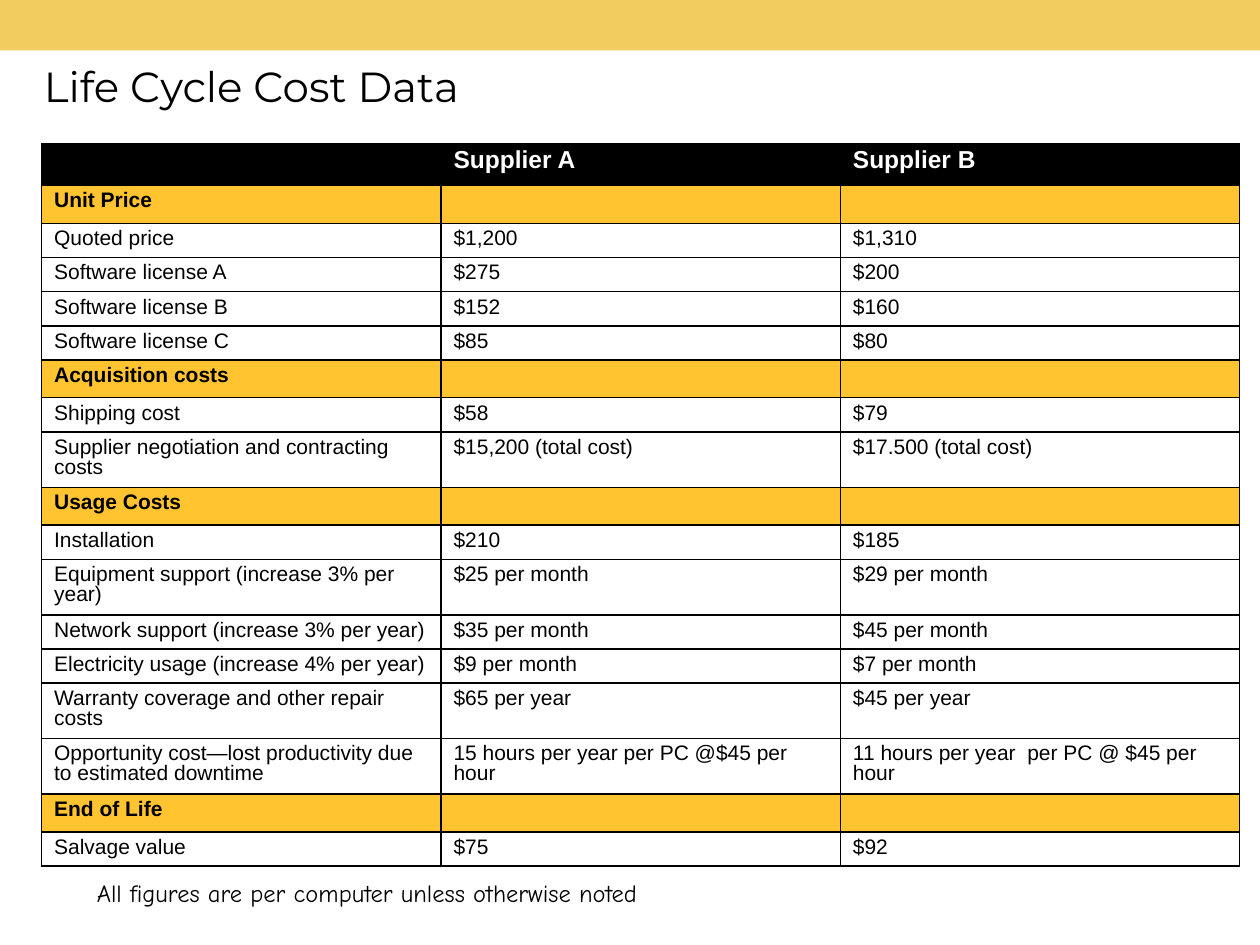
"""Build the life cycle cost comparison slide."""
from lxml.etree import SubElement
from pptx import Presentation
from pptx.dml.color import RGBColor
from pptx.enum.shapes import MSO_SHAPE
from pptx.enum.text import MSO_ANCHOR
from pptx.oxml.ns import qn
from pptx.util import Inches, Pt

BLACK = RGBColor(0x00, 0x00, 0x00)
WHITE = RGBColor(0xFF, 0xFF, 0xFF)
BANNER_GOLD = RGBColor(0xF3, 0xCC, 0x5F)
SECTION_GOLD = RGBColor(0xFF, 0xC4, 0x2F)
WIDTH, HEIGHT = Inches(10), Inches(7.5)
COLUMN_WIDTH = Inches(3.17)
HEADING_ROW, SINGLE_ROW, DOUBLE_ROW = Inches(0.3), Inches(0.27), Inches(0.44)
DOUBLE_LINED = ("Supplier negotiation", "Equipment", "Warranty", "Opportunity")

HEADER = ("", "Supplier A", "Supplier B")
SECTIONS = {
    "Unit Price": [
        ("Quoted price", "$1,200", "$1,310"),
        ("Software license A", "$275", "$200"),
        ("Software license B", "$152", "$160"),
        ("Software license C", "$85", "$80"),
    ],
    "Acquisition costs": [
        ("Shipping cost", "$58", "$79"),
        ("Supplier negotiation and contracting costs",
         "$15,200 (total cost)", "$17.500 (total cost)"),
    ],
    "Usage Costs": [
        ("Installation", "$210", "$185"),
        ("Equipment support (increase 3% per year)", "$25 per month", "$29 per month"),
        ("Network support (increase 3% per year)", "$35 per month", "$45 per month"),
        ("Electricity usage (increase 4% per year)", "$9 per month", "$7 per month"),
        ("Warranty coverage and other repair costs", "$65 per year", "$45 per year"),
        ("Opportunity cost—lost productivity due to estimated downtime",
         "15 hours per year per PC @$45 per hour",
         "11 hours per year  per PC @ $45 per hour"),
    ],
    "End of Life": [("Salvage value", "$75", "$92")],
}


def write(para, text, size=12, font="Arial", color=BLACK, bold=False):
    if not text:
        SubElement(para._p, qn("a:endParaRPr"), sz=str(size * 100))
        return
    span = para.add_run()
    span.text = text
    span.font.size, span.font.name, span.font.bold = Pt(size), font, bold
    span.font.color.rgb = color


def draw_borders(cell):
    properties = cell._tc.get_or_add_tcPr()
    for side in ("lnL", "lnR", "lnT", "lnB"):
        line = SubElement(properties, qn(f"a:{side}"), w=str(Pt(1)))
        fill = SubElement(line, qn("a:solidFill"))
        SubElement(fill, qn("a:srgbClr"), val=str(BLACK))


deck = Presentation()
deck.slide_width, deck.slide_height = WIDTH, HEIGHT
page = deck.slides.add_slide(deck.slide_layouts[6])

banner = page.shapes.add_shape(MSO_SHAPE.RECTANGLE, 0, 0, WIDTH, Inches(0.4))
banner.shadow.inherit = False
banner.fill.solid()
banner.fill.fore_color.rgb = BANNER_GOLD
banner.line.fill.background()

captions = [
    ("Life Cycle Cost Data", "Montserrat", 24, (0.25, 0.43, 3.92, 0.5)),
    ("All figures are per computer unless otherwise noted", "Comic Neue", 14,
     (0.67, 6.92, 4.92, 0.33)),
]
for text, font, size, place in captions:
    box = page.shapes.add_textbox(*map(Inches, place))
    box.text_frame.word_wrap = False
    box.text_frame.vertical_anchor = MSO_ANCHOR.MIDDLE
    write(box.text_frame.paragraphs[0], text, size=size, font=font)

rows = [(HEADER, HEADING_ROW, BLACK, dict(size=14, color=WHITE, bold=True))]
for section, costs in SECTIONS.items():
    rows.append(((section, "", ""), HEADING_ROW, SECTION_GOLD, dict(bold=True)))
    for cost in costs:
        height = DOUBLE_ROW if cost[0].startswith(DOUBLE_LINED) else SINGLE_ROW
        rows.append((cost, height, WHITE, {}))

frame = page.shapes.add_table(len(rows), len(HEADER), Inches(0.33), Inches(1.14),
                              COLUMN_WIDTH * len(HEADER), sum(row[1] for row in rows))
table = frame.table
table.first_row = table.horz_banding = False
for column in table.columns:
    column.width = COLUMN_WIDTH
for row, (texts, height, background, style) in zip(table.rows, rows):
    row.height = height
    for cell, text in zip(row.cells, texts):
        draw_borders(cell)
        cell.fill.solid()
        cell.fill.fore_color.rgb = background
        para = cell.text_frame.paragraphs[0]
        para.line_spacing = 0.85
        write(para, text, **style)

deck.save("out.pptx")
